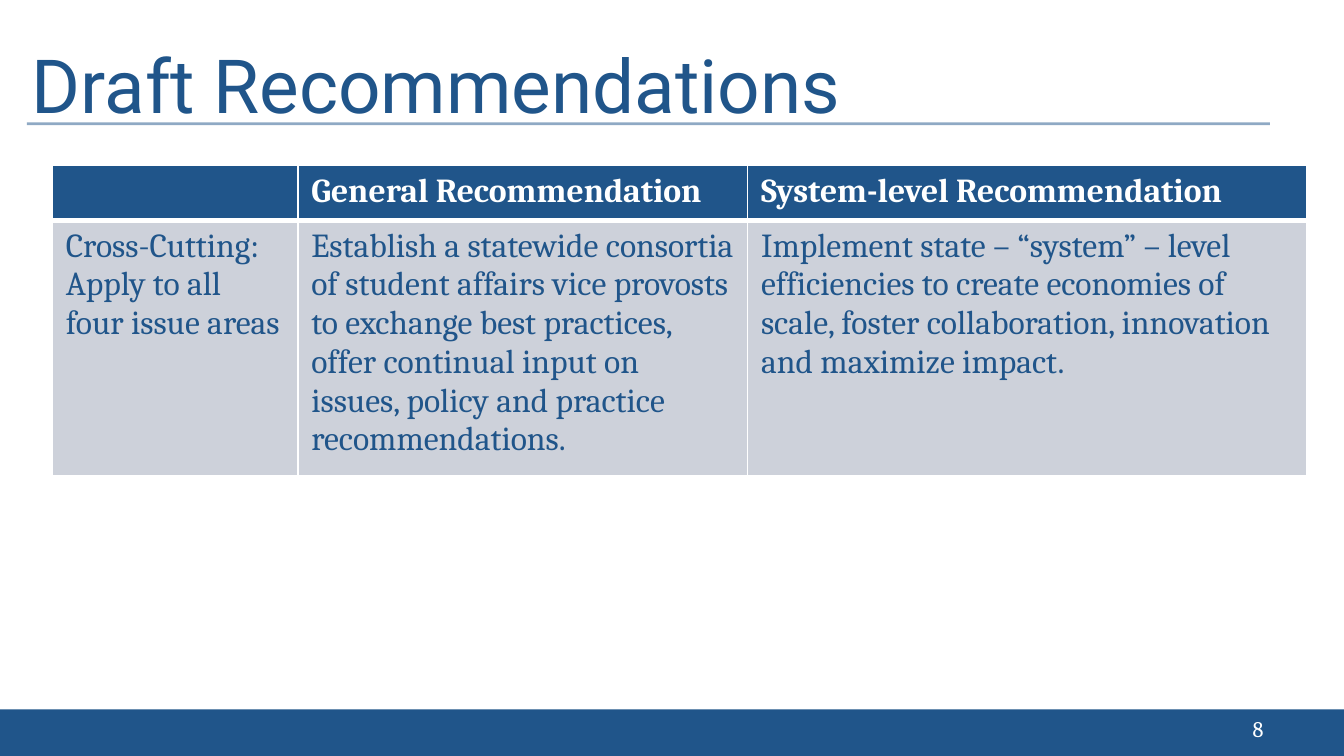
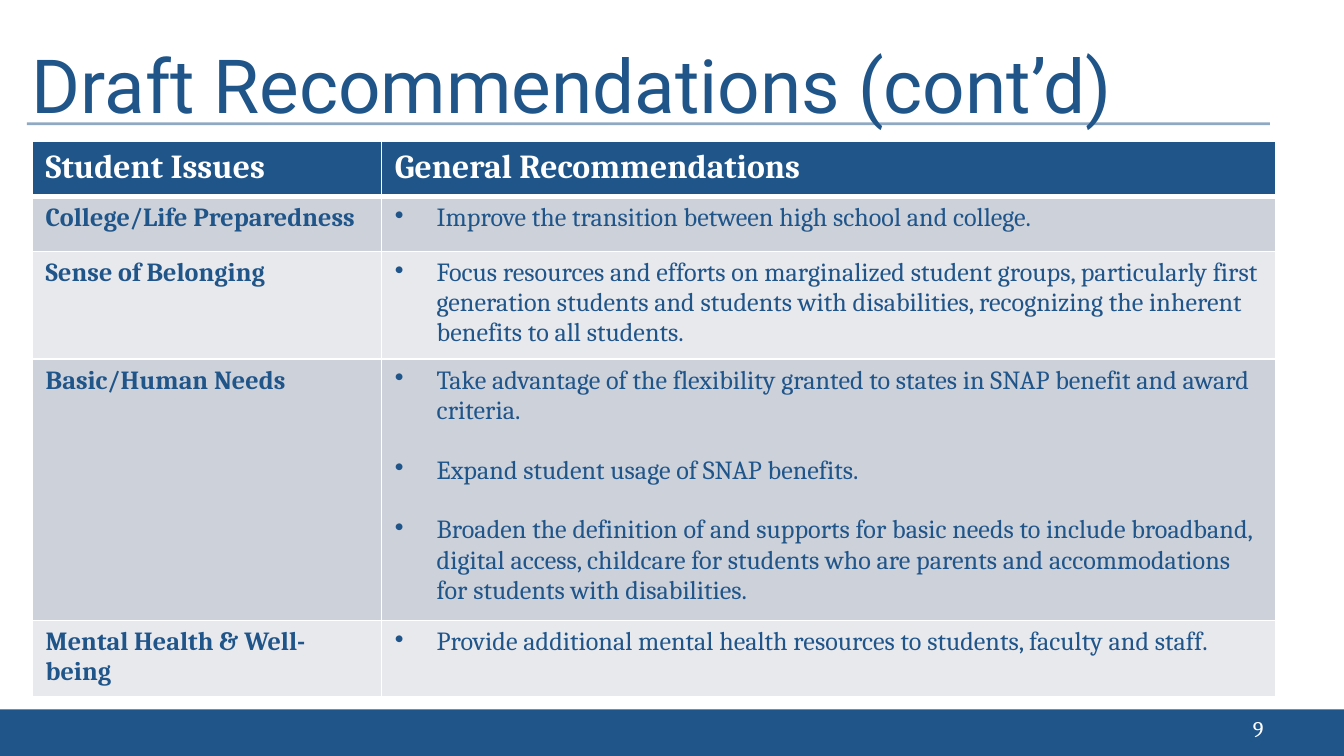
from lxml.etree import SubElement
from pptx import Presentation
from pptx.dml.color import RGBColor
from pptx.enum.shapes import MSO_CONNECTOR, MSO_SHAPE
from pptx.enum.text import MSO_ANCHOR, PP_ALIGN
from pptx.oxml.ns import qn
from pptx.util import Cm, Pt

BLUE, WHITE = "20558A", "FFFFFF"
BANDS = ("CDD1DA", "E8E9ED")
BODY_FONT, TITLE_FONT = "Cambria", "Roboto"
ROW_HEIGHT = Cm(1.04)
BULLET_INDENT = Cm(0.79)


def color(value):
    return RGBColor.from_string(value)


def style(para, size, tint, bold=False, name=BODY_FONT):
    font = para.font
    font.name, font.size, font.bold = name, Pt(size), bold
    font.color.rgb = color(tint)


def add_text(page, text, left, top, width, height):
    """Add a one-paragraph text box and return its frame and paragraph."""
    box = page.shapes.add_textbox(Cm(left), Cm(top), Cm(width), Cm(height))
    frame = box.text_frame
    frame.word_wrap = True
    para = frame.paragraphs[0]
    para.text = text
    return frame, para


def add_title(page, text):
    frame, para = add_text(page, text, 0.41, 0.64, 23.04, 2.03)
    frame.margin_left = frame.margin_right = Cm(0.19)
    frame.margin_top = frame.margin_bottom = Cm(0.1)
    style(para, 40, BLUE, name=TITLE_FONT)


def add_footer(page, number):
    band = page.shapes.add_shape(
        MSO_SHAPE.RECTANGLE, Cm(-0.03), Cm(13.41), Cm(25.43), Cm(0.89))
    band.shadow.inherit = False
    band.fill.solid()
    band.fill.fore_color.rgb = color(BLUE)
    band.line.fill.background()

    frame, para = add_text(page, str(number), 18.21, 13.39, 5.92, 0.76)
    frame.vertical_anchor = MSO_ANCHOR.MIDDLE
    para.alignment = PP_ALIGN.RIGHT
    style(para, 12, WHITE)


def add_title_rule(page):
    rule = page.shapes.add_connector(
        MSO_CONNECTOR.STRAIGHT, Cm(0.51), Cm(2.34), Cm(24), Cm(2.34))
    rule.line.width = Pt(1.5)
    rule.line.color.rgb = color(BLUE)
    tint = rule.line._ln.find(".//" + qn("a:srgbClr"))
    SubElement(tint, qn("a:alpha"), val="50000")
    SubElement(rule._element.spPr, qn("a:effectLst"))


def add_page(deck, title, number):
    page = deck.slides.add_slide(deck.slide_layouts[6])
    add_footer(page, number)
    add_title_rule(page)
    add_title(page, title)
    return page


def set_borders(cell, top=1, bottom=1):
    props = cell._tc.get_or_add_tcPr()
    for side, width in (("L", 1), ("R", 1), ("T", top), ("B", bottom)):
        line = SubElement(props, qn(f"a:ln{side}"), w=str(Pt(width)))
        fill = SubElement(line, qn("a:solidFill"))
        SubElement(fill, qn("a:srgbClr"), val=WHITE)


def add_bullet(para):
    props = para._p.get_or_add_pPr()
    props.set("marL", str(BULLET_INDENT))
    props.set("indent", str(-BULLET_INDENT))
    SubElement(props, qn("a:buChar"), char="•")


def fill_cell(cell, content, fill, size, tint, bold):
    """Write a string as plain text, or a list of strings as bullets."""
    cell.fill.solid()
    cell.fill.fore_color.rgb = color(fill)
    frame = cell.text_frame
    bulleted = isinstance(content, list)
    for index, text in enumerate(content if bulleted else [content]):
        para = frame.add_paragraph() if index else frame.paragraphs[0]
        para.text = text
        if bulleted:
            add_bullet(para)
        if index:
            para.space_before = Pt(16)
        style(para, size, tint, bold)


def add_grid(page, left, top, widths, rows, body_size, bold_labels=False):
    """Add a table with a blue header row and shaded body rows."""
    frame = page.shapes.add_table(
        len(rows), len(widths), Cm(left), Cm(top),
        Cm(sum(widths)), ROW_HEIGHT * len(rows))
    table = frame.table
    for column, width in zip(table.columns, widths):
        column.width = Cm(width)
    for r, row in enumerate(rows):
        table.rows[r].height = ROW_HEIGHT
        for c, content in enumerate(row):
            cell = table.cell(r, c)
            set_borders(cell, top=3 if r == 1 else 1, bottom=1 if r else 3)
            if r == 0:
                fill_cell(cell, content, BLUE, 18, WHITE, True)
            else:
                fill_cell(cell, content, BANDS[(r - 1) % 2], body_size, BLUE,
                          bold_labels and c == 0)


CROSS_CUTTING = [
    ("", "General Recommendation", "System-level Recommendation"),
    ("Cross-Cutting: Apply to all four issue areas",
     "Establish a statewide consortia of student affairs vice provosts to "
     "exchange best practices, offer continual input on issues, policy and "
     "practice recommendations.",
     "Implement state – “system” – level efficiencies to create economies of "
     "scale, foster collaboration, innovation and maximize impact."),
]

STUDENT_ISSUES = [
    ("Student Issues", "General Recommendations"),
    ("College/Life Preparedness",
     ["Improve the transition between high school and college."]),
    ("Sense of Belonging",
     ["Focus resources and efforts on marginalized student groups, "
      "particularly first generation students and students with "
      "disabilities, recognizing the inherent benefits to all students."]),
    ("Basic/Human Needs",
     ["Take advantage of the flexibility granted to states in SNAP benefit "
      "and award criteria.",
      "Expand student usage of SNAP benefits.",
      "Broaden the definition of and supports for basic needs to include "
      "broadband, digital access, childcare for students who are parents and "
      "accommodations for students with disabilities."]),
    ("Mental Health & Well-being",
     ["Provide additional mental health resources to students, faculty and "
      "staff."]),
]


def main():
    deck = Presentation()
    deck.slide_width, deck.slide_height = Cm(25.4), Cm(14.29)

    page = add_page(deck, "Draft Recommendations", 8)
    add_grid(page, 0.99, 3.12, (4.64, 8.5, 10.56), CROSS_CUTTING, 18)

    page = add_page(deck, "Draft Recommendations (cont’d)", 9)
    add_grid(page, 0.61, 2.67, (6.6, 16.91), STUDENT_ISSUES, 14,
             bold_labels=True)

    deck.save("out.pptx")


if __name__ == "__main__":
    main()
